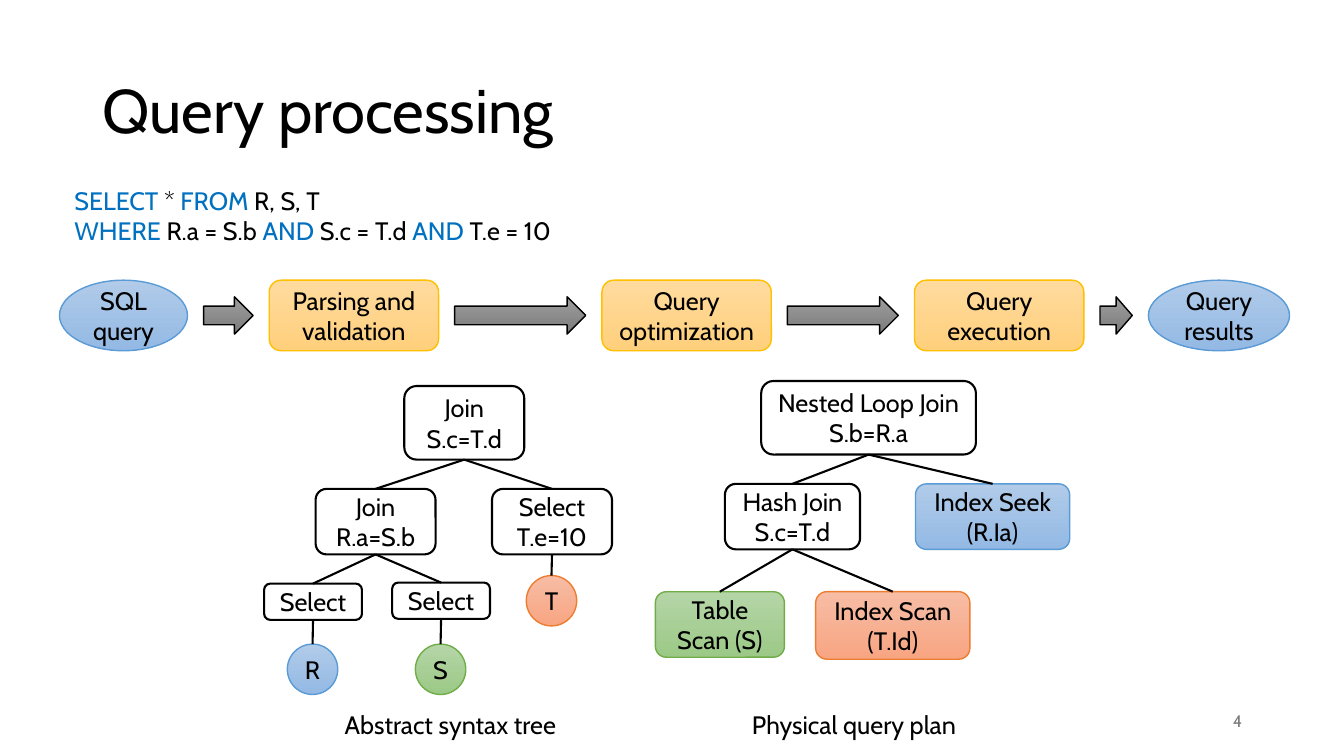
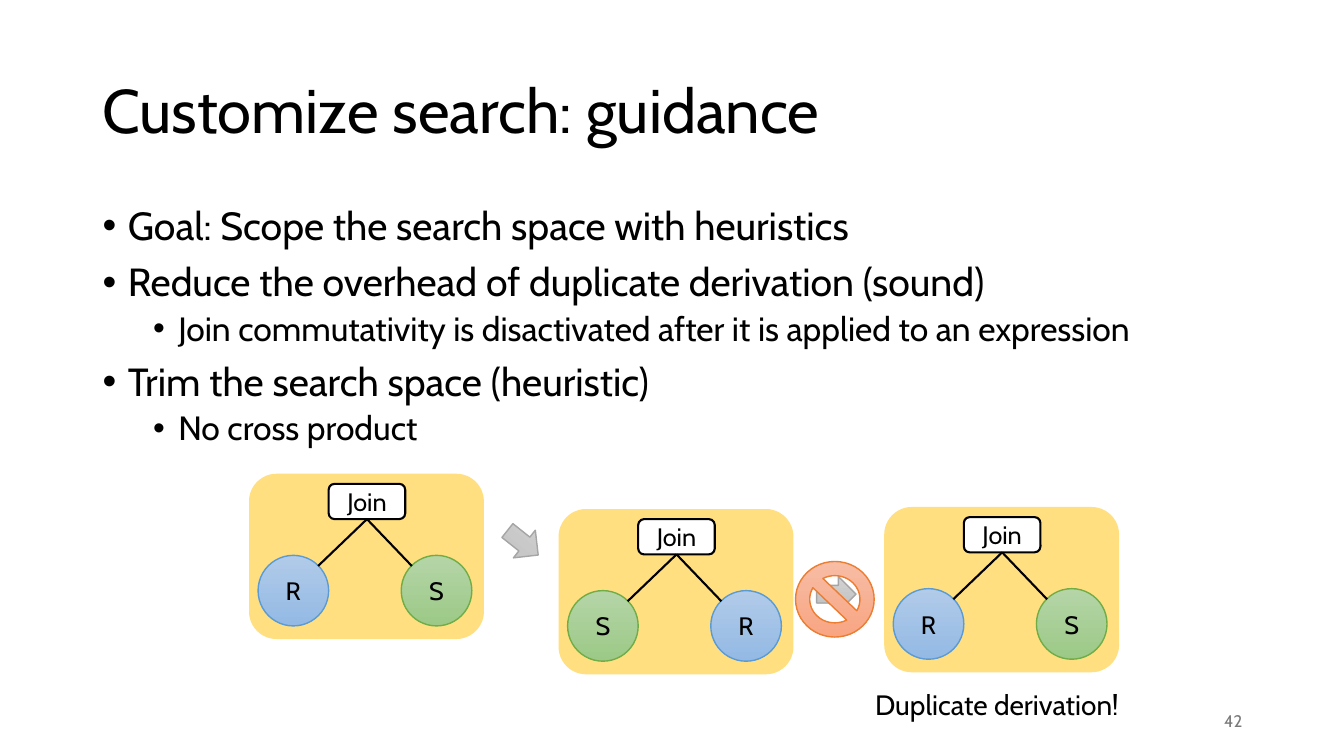
from lxml.etree import SubElement as Sub
from pptx import Presentation
from pptx.dml.color import RGBColor as RGB
from pptx.enum.shapes import MSO_CONNECTOR as Link, MSO_SHAPE as Kind
from pptx.enum.text import MSO_ANCHOR as Anchor, PP_ALIGN as Align
from pptx.oxml.ns import qn
from pptx.util import Inches, Pt

FONT = "Cabin"
BLACK = RGB(0x00, 0x00, 0x00)
WHITE = RGB(0xFF, 0xFF, 0xFF)
GRAY = RGB(0x79, 0x79, 0x79)
KEY = RGB(0x00, 0x70, 0xC0)
AMBER = RGB(0xFF, 0xC0, 0x00)

BLUE = (RGB(0xB1, 0xCB, 0xE9), RGB(0x93, 0xB9, 0xE4), RGB(0x5B, 0x9B, 0xD5))
GREEN = (RGB(0xB5, 0xD5, 0xA7), RGB(0x9C, 0xC9, 0x87), RGB(0x70, 0xAD, 0x47))
RED = (RGB(0xF7, 0xBD, 0xA5), RGB(0xF8, 0xA5, 0x82), RGB(0xED, 0x7D, 0x31))
GOLD = (RGB(0xFF, 0xDB, 0x9E), RGB(0xFF, 0xD0, 0x7C), AMBER)
DARK = (RGB(0x9D, 0x9D, 0x9D), RGB(0x7C, 0x7C, 0x7C), BLACK)
PALE = (RGB(0xD2, 0xD2, 0xD2), RGB(0xC0, 0xC0, 0xC0), RGB(0xA5, 0xA5, 0xA5))

BOX = Kind.ROUNDED_RECTANGLE
DOT = Kind.FLOWCHART_CONNECTOR
ARROW = Kind.RIGHT_ARROW


def style(par, size, color=BLACK, align=Align.LEFT):
    par.alignment = align
    par.font.name = FONT
    par.font.size = Pt(size)
    par.font.color.rgb = color


def add_text(slide, box, text, size, color=BLACK, align=Align.LEFT, anchor=Anchor.TOP):
    frame = slide.shapes.add_textbox(*map(Inches, box)).text_frame
    frame.word_wrap = True
    frame.vertical_anchor = anchor
    frame.text = text
    for par in frame.paragraphs:
        style(par, size, color, align)
    return frame


def add_shape(slide, kind, box, tone=None, text=""):
    shape = slide.shapes.add_shape(kind, *map(Inches, box))
    shape.shadow.inherit = False
    if tone:
        top, base, edge = tone
        shape.fill.gradient()
        shape.fill.gradient_angle = 270
        for stop, color in zip(shape.fill.gradient_stops, (top, base)):
            stop.color.rgb = color
        shape.line.color.rgb = edge
        shape.line.width = Pt(1)
    else:
        shape.fill.solid()
        shape.fill.fore_color.rgb = WHITE
        shape.line.color.rgb = BLACK
        shape.line.width = Pt(1.5)
    frame = shape.text_frame
    frame.vertical_anchor = Anchor.MIDDLE
    if kind == DOT:
        frame.margin_left = frame.margin_right = 0
    if text:
        frame.text = text
        for par in frame.paragraphs:
            style(par, 18, BLACK, Align.CENTER)
    return shape


def add_line(slide, x1=0, y1=0, x2=0, y2=0):
    ends = map(Inches, (x1, y1, x2, y2))
    line = slide.shapes.add_connector(Link.STRAIGHT, *ends)
    line.line.color.rgb = BLACK
    line.line.width = Pt(1.5)
    Sub(line.element.spPr, qn("a:effectLst"))
    return line


def add_frame(deck, title, number):
    slide = deck.slides.add_slide(deck.slide_layouts[6])
    head = add_text(slide, (0.92, 0.4, 11.5, 1.45), title, 44, anchor=Anchor.MIDDLE)
    head.paragraphs[0].line_spacing = 0.9
    add_text(slide, (9.42, 6.95, 3, 0.4), number, 12, GRAY, Align.RIGHT, Anchor.MIDDLE)
    return slide


def add_query(slide, box, rows):
    frame = add_text(slide, box, "\n" * (len(rows) - 1), 18)
    for par, row in zip(frame.paragraphs, rows):
        for i, text in enumerate(row):
            run = par.add_run()
            run.text = text
            run.font.color.rgb = BLACK if i % 2 else KEY


def add_flow(slide, top, stages):
    gap, high, thick = 0.16, 0.7, 0.37
    last = None
    for text, kind, tone, left, wide in stages:
        add_shape(slide, kind, (left, top, wide, high), tone, text)
        if last:
            start = last + gap
            mid = top + (high - thick) / 2
            add_shape(slide, ARROW, (start, mid, left - gap - start, thick), DARK)
        last = left + wide


def add_tree(slide, left, top, nodes):
    made = []
    for text, kind, tone, x, y, wide, high, root in nodes:
        node = add_shape(slide, kind, (left + x, top + y, wide, high), tone, text)
        made.append(node)
        if root is not None:
            line = add_line(slide)
            line.begin_connect(made[root], 2)
            line.end_connect(node, 0)


def add_list(slide, box, items):
    frame = add_text(slide, box, "\n".join(text for _, text in items), 28)
    for par, (level, _) in zip(frame.paragraphs, items):
        par.level = level
        par.font.size = Pt(24 if level else 28)
        par.line_spacing = 0.9
        par.space_before = Pt(5 if level else 10)
        props = par._p.get_or_add_pPr()
        props.set("marL", str(Inches(0.25 + 0.5 * level)))
        props.set("indent", str(Inches(-0.25)))
        Sub(props, qn("a:buFont"), typeface="Arial")
        Sub(props, qn("a:buChar"), char="•")


def add_card(slide, left, top, leaves):
    card = add_shape(slide, BOX, (left, top, 2.33, 1.64))
    card.fill.fore_color.rgb = AMBER
    card.line.fill.background()
    color = card.fill._xPr.find(qn("a:solidFill"))[0]
    Sub(color, qn("a:alpha"), val="50000")
    add_shape(slide, BOX, (left + 0.79, top + 0.1, 0.76, 0.35), None, "Join")
    size, y = 0.7, top + 0.81
    inset = size * 0.15
    for (text, tone), x, touch in zip(leaves, (0.09, 1.51), (size - inset, inset)):
        add_shape(slide, DOT, (left + x, y, size, size), tone, text)
        add_line(slide, left + x + touch, y + inset, left + 1.17, top + 0.45)


def build_query(deck):
    slide = add_frame(deck, "Query processing", "4")
    add_flow(slide, 2.78, [
        ("SQL query", Kind.OVAL, BLUE, 0.59, 1.27),
        ("Parsing and validation", BOX, GOLD, 2.67, 1.68),
        ("Query optimization", BOX, GOLD, 5.97, 1.68),
        ("Query execution", BOX, GOLD, 9.07, 1.68),
        ("Query results", Kind.OVAL, BLUE, 11.39, 1.4),
    ])
    add_tree(slide, 2.62, 3.83, [
        ("Join\nS.c=T.d", BOX, None, 1.39, 0, 1.19, 0.73, None),
        ("Join\nR.a=S.b", BOX, None, 0.51, 1.02, 1.19, 0.65, 0),
        ("Select\nT.e=10", BOX, None, 2.26, 1.02, 1.19, 0.65, 0),
        ("Select", BOX, None, 0, 1.96, 0.97, 0.36, 1),
        ("Select", BOX, None, 1.27, 1.95, 0.97, 0.36, 1),
        ("T", DOT, RED, 2.6, 1.88, 0.5, 0.5, 2),
        ("R", DOT, BLUE, 0.23, 2.56, 0.5, 0.5, 3),
        ("S", DOT, GREEN, 1.5, 2.56, 0.5, 0.5, 4),
    ])
    add_tree(slide, 6.5, 3.78, [
        ("Nested Loop Join\nS.b=R.a", BOX, None, 1.05, 0, 2.13, 0.73, None),
        ("Hash Join\nS.c=T.d", BOX, None, 0.69, 1.02, 1.34, 0.65, 0),
        ("Index Seek (R.Ia)", BOX, BLUE, 2.58, 1.02, 1.53, 0.65, 0),
        ("Table Scan (S)", BOX, GREEN, 0, 2.09, 1.28, 0.65, 1),
        ("Index Scan (T.Id)", BOX, RED, 1.59, 2.09, 1.53, 0.67, 1),
    ])
    add_text(slide, (3.32, 6.99, 2.36, 0.4), "Abstract syntax tree", 18)
    add_text(slide, (7.36, 6.99, 2.31, 0.4), "Physical query plan", 18)
    add_query(slide, (0.64, 1.79, 4.98, 0.71), [
        ("SELECT", " * ", "FROM ", "R, S, T"),
        ("WHERE ", "R.a = S.b ", "AND ", "S.c = T.d ", "AND ", "T.e = 10"),
    ])


def build_guide(deck):
    slide = add_frame(deck, "Customize search: guidance", "42")
    add_list(slide, (0.92, 2, 11.5, 4.76), [
        (0, "Goal: Scope the search space with heuristics"),
        (0, "Reduce the overhead of duplicate derivation (sound)"),
        (1, "Join commutativity is disactivated after it is applied to an expression"),
        (0, "Trim the search space (heuristic)"),
        (1, "No cross product"),
    ])
    pair = [("R", BLUE), ("S", GREEN)]
    add_card(slide, 2.47, 4.7, pair)
    add_card(slide, 5.54, 5.05, pair[::-1])
    add_card(slide, 8.77, 5.03, pair)
    add_shape(slide, ARROW, (4.99, 5.21, 0.39, 0.35), PALE).rotation = 38.5
    add_shape(slide, ARROW, (8.1, 5.72, 0.39, 0.35), PALE)
    add_text(slide, (8.58, 6.77, 2.72, 0.44), "Duplicate derivation!", 20)
    add_shape(slide, Kind.NO_SYMBOL, (7.89, 5.57, 0.78, 0.75), RED)


def main():
    deck = Presentation()
    deck.slide_width = Inches(13.33)
    deck.slide_height = Inches(7.5)
    build_query(deck)
    build_guide(deck)
    deck.save("out.pptx")


if __name__ == "__main__":
    main()
